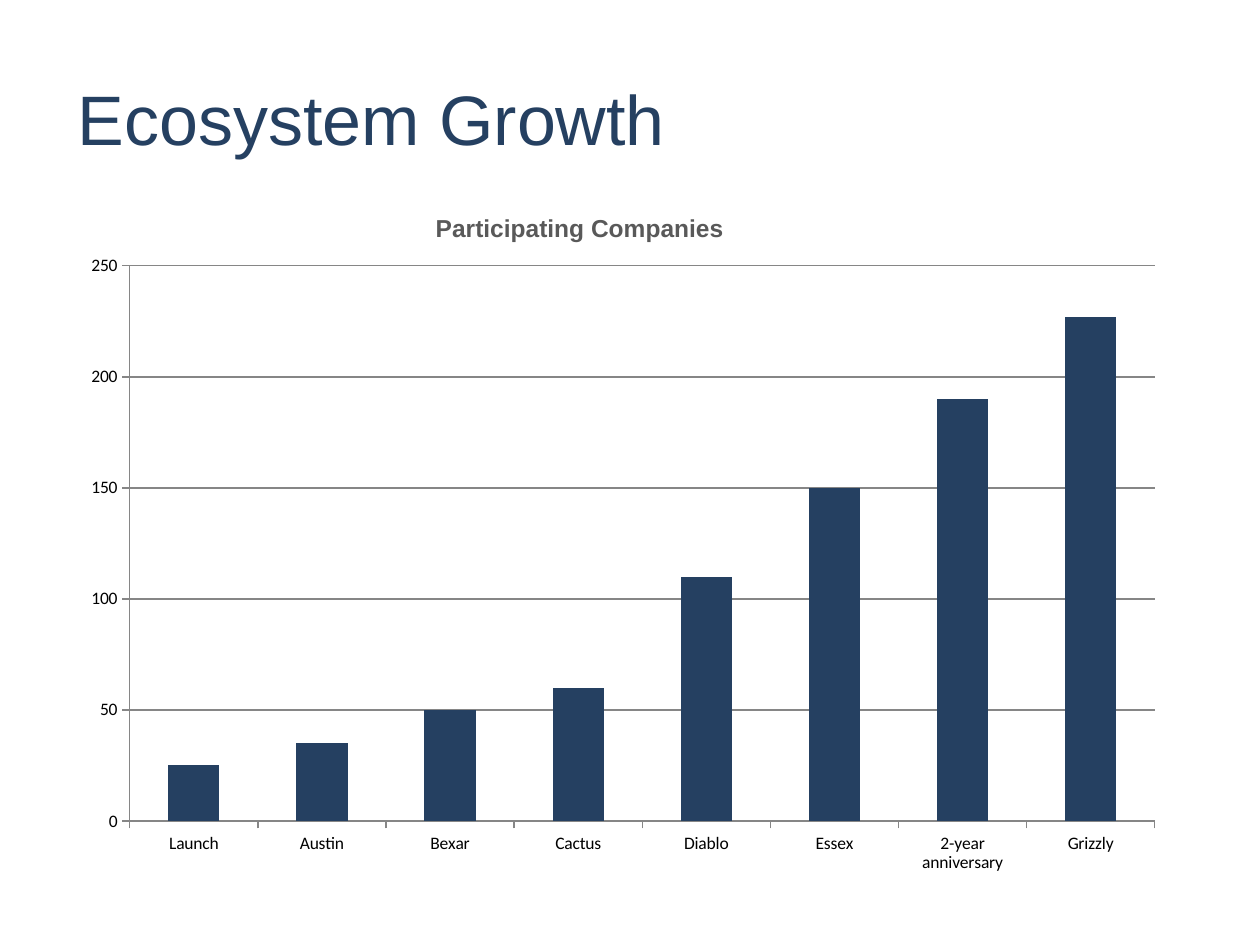
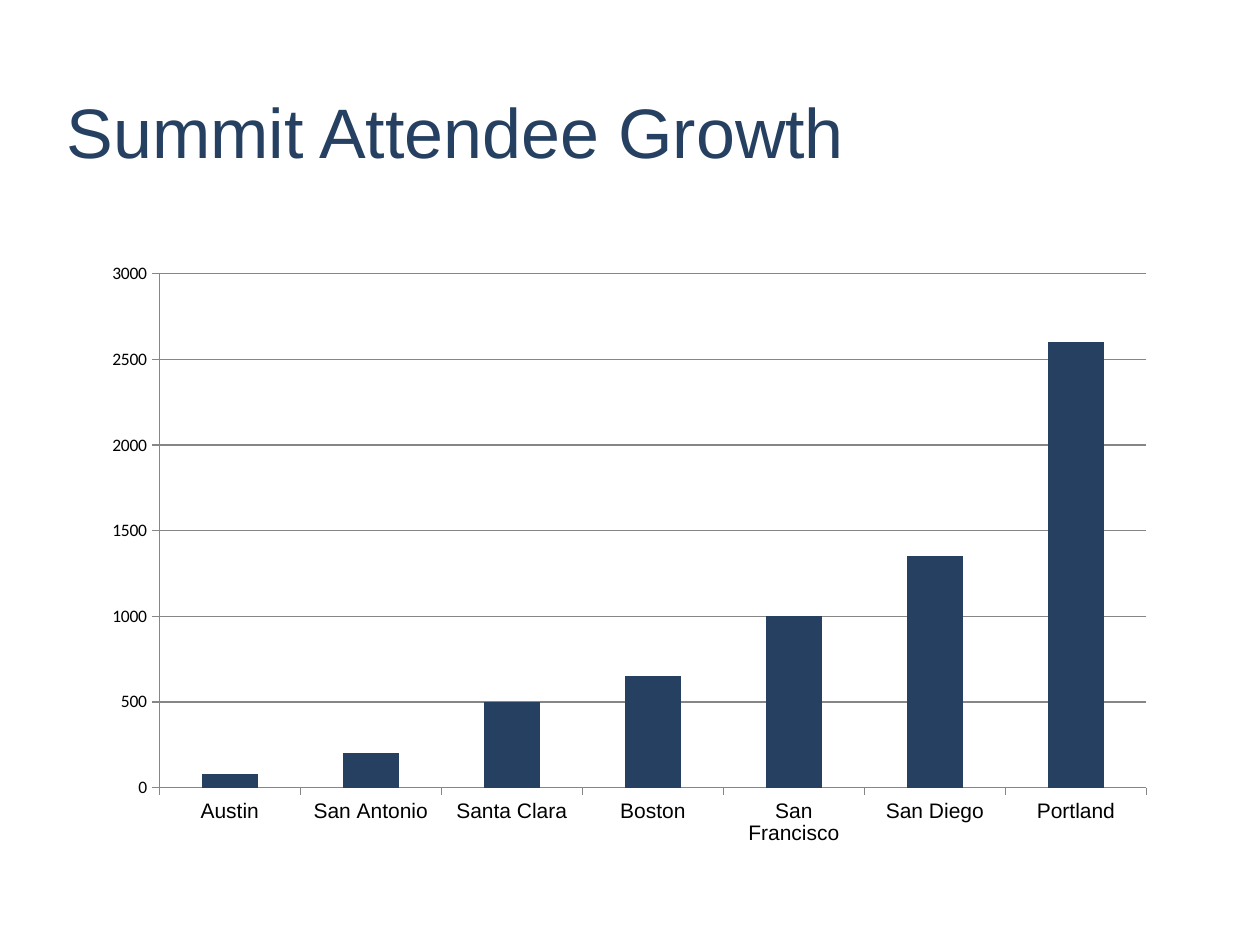
"""Build two slides of column charts showing community growth."""
from dataclasses import dataclass
from typing import Optional

from pptx import Presentation
from pptx.chart.data import CategoryChartData
from pptx.dml.color import RGBColor
from pptx.enum.chart import XL_CHART_TYPE as ChartType, XL_TICK_MARK as Tick
from pptx.enum.text import MSO_ANCHOR as Anchor
from pptx.util import Inches, Pt


@dataclass(frozen=True)
class Theme:
    navy: RGBColor = RGBColor(0x25, 0x40, 0x61)
    gray: RGBColor = RGBColor(0x59, 0x59, 0x59)
    rule: RGBColor = RGBColor(0x86, 0x86, 0x86)
    black: RGBColor = RGBColor(0, 0, 0)
    text_font: str = "Arial"
    chart_font: str = "Calibri"
    title_size: int = 40
    caption_size: int = 14
    category_size: int = 12
    chart_size: int = 10


@dataclass(frozen=True)
class Box:
    left: float
    top: float
    width: float
    height: float

    def lengths(self) -> tuple:
        return tuple(Inches(v) for v in (self.left, self.top, self.width, self.height))


@dataclass(frozen=True)
class GrowthSlide:
    title: str
    title_box: Box
    chart_box: Box
    values: dict[str, int]
    caption: Optional[str] = None
    large_categories: bool = False


THEME = Theme()
CAPTION_BOX = Box(3.36, 1.64, 2.75, 0.53)

SLIDES = [
    GrowthSlide(
        "Ecosystem Growth",
        Box(0.52, 0.25, 9.55, 1.36),
        Box(0.55, 1.93, 8.79, 5.1),
        {"Launch": 25, "Austin": 35, "Bexar": 50, "Cactus": 60, "Diablo": 110,
         "Essex": 150, "2-year anniversary": 190, "Grizzly": 227},
        caption="Participating Companies",
    ),
    GrowthSlide(
        "Summit Attendee Growth",
        Box(0.43, 0.36, 9.55, 1.36),
        Box(0.72, 2, 8.55, 4.8),
        {"Austin": 80, "San Antonio": 200, "Santa Clara": 500, "Boston": 650,
         "San Francisco": 1000, "San Diego": 1350, "Portland": 2600},
        large_categories=True,
    ),
]


def set_font(font, size: int, color: RGBColor, name: str, bold: bool = False) -> None:
    font.size, font.name, font.bold = Pt(size), name, bold
    font.color.rgb = color


def add_text(slide, text: str, box: Box, *, size: int, color: RGBColor,
             bold: bool = False, anchor=Anchor.TOP) -> None:
    tf = slide.shapes.add_textbox(*box.lengths()).text_frame
    tf.word_wrap = True
    tf.vertical_anchor = anchor
    r = tf.paragraphs[0].add_run()
    r.text = text
    set_font(r.font, size, color, THEME.text_font, bold)


def style_line(line) -> None:
    line.color.rgb = THEME.rule
    line.width = Pt(0.75)


def add_growth_chart(slide, content: GrowthSlide) -> None:
    data = CategoryChartData()
    data.categories = list(content.values)
    data.add_series("Series 1", list(content.values.values()))
    chart = slide.shapes.add_chart(
        ChartType.COLUMN_CLUSTERED, *content.chart_box.lengths(), data).chart
    chart.has_legend = chart.has_title = False
    set_font(chart.font, THEME.chart_size, THEME.black, THEME.chart_font)

    plot = chart.plots[0]
    plot.gap_width = 150
    plot.vary_by_categories = False
    fill = plot.series[0].format.fill
    fill.solid()
    fill.fore_color.rgb = THEME.navy

    for axis in (chart.category_axis, chart.value_axis):
        axis.major_tick_mark = Tick.OUTSIDE
        axis.minor_tick_mark = Tick.NONE
        style_line(axis.format.line)
    chart.value_axis.has_major_gridlines = True
    style_line(chart.value_axis.major_gridlines.format.line)
    if content.large_categories:
        set_font(chart.category_axis.tick_labels.font, THEME.category_size,
                 THEME.black, THEME.text_font)


def add_growth_slide(prs, content: GrowthSlide) -> None:
    s = prs.slides.add_slide(prs.slide_layouts[6])
    add_text(s, content.title, content.title_box, size=THEME.title_size,
             color=THEME.navy, anchor=Anchor.MIDDLE)
    if content.caption:
        add_text(s, content.caption, CAPTION_BOX, size=THEME.caption_size,
                 color=THEME.gray, bold=True)
    add_growth_chart(s, content)


def main() -> None:
    prs = Presentation()
    prs.slide_width, prs.slide_height = Inches(10), Inches(7.5)
    for content in SLIDES:
        add_growth_slide(prs, content)
    prs.save("out.pptx")


if __name__ == "__main__":
    main()
